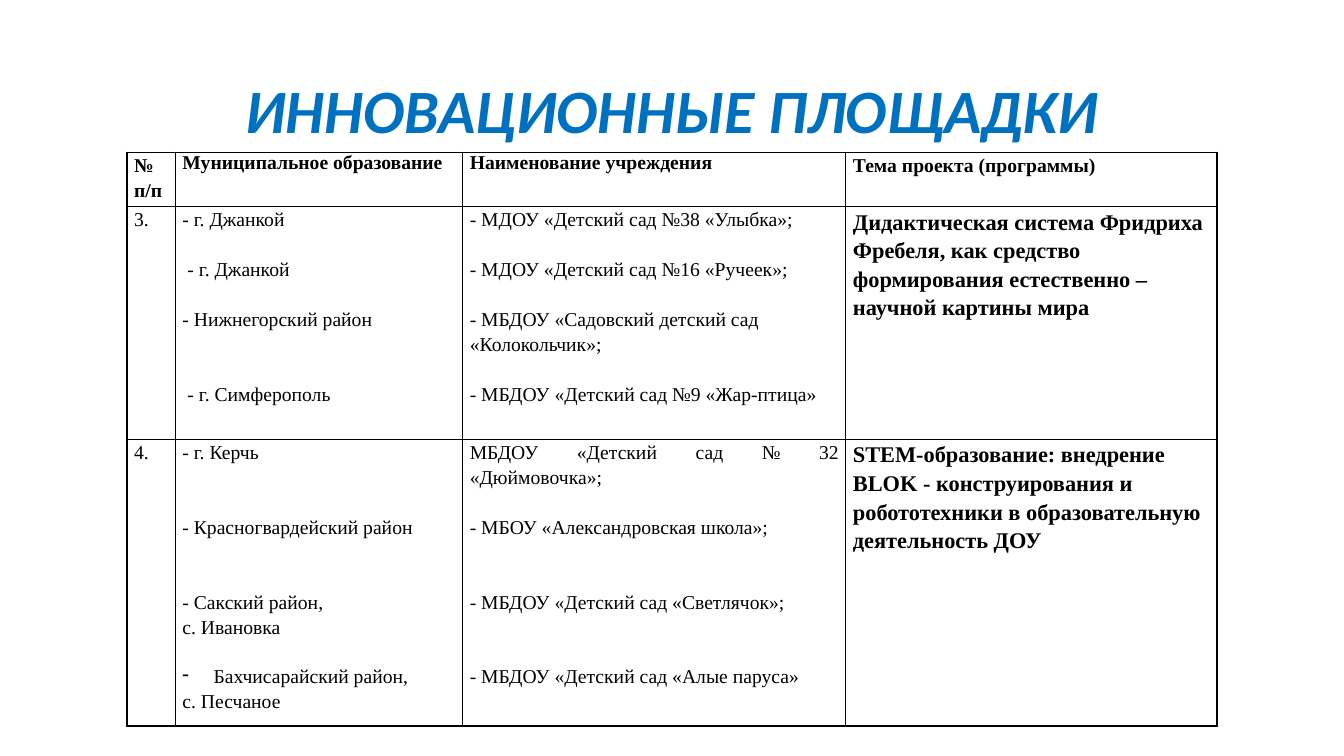
from lxml.etree import SubElement
from pptx import Presentation
from pptx.dml.color import RGBColor
from pptx.enum.text import MSO_ANCHOR, PP_ALIGN
from pptx.oxml.ns import qn
from pptx.util import Pt

SCALE = 9144  # EMU in one px, 100 px to the inch
LINE = 17.8  # height of one table line, points
LEFT, EVEN = PP_ALIGN.LEFT, PP_ALIGN.JUSTIFY

HEADS = [
    ("№ п/п", 1.15),
    ("Муниципальное образование", 1),
    ("Наименование учреждения", 1),
    ("Тема проекта (программы)", 1.15),
]

# Each line: empty lines above, text, then optional left indent and bullet
ROWS = [
    (
        "3.",
        [
            (0, "- г. Джанкой"),
            (1, "- г. Джанкой", 5),
            (1, "- Нижнегорский район"),
            (2, "- г. Симферополь", 5),
        ],
        [
            (0, "- МДОУ «Детский сад №38 «Улыбка»;"),
            (1, "- МДОУ «Детский сад №16 «Ручеек»;"),
            (1, "- МБДОУ «Садовский детский сад «Колокольчик»;"),
            (1, "- МБДОУ «Детский сад №9 «Жар-птица»"),
        ],
        LEFT,
        "Дидактическая система Фридриха Фребеля, как средство "
        "формирования естественно – научной картины мира",
    ),
    (
        "4.",
        [
            (0, "- г. Керчь"),
            (2, "- Красногвардейский район"),
            (2, "- Сакский район,"),
            (0, "с. Ивановка"),
            (1, "Бахчисарайский район,", 31, "-"),
            (0, "с. Песчаное"),
        ],
        [
            (0, "МБДОУ «Детский сад № 32 «Дюймовочка»;"),
            (1, "- МБОУ «Александровская школа»;"),
            (2, "- МБДОУ «Детский сад «Светлячок»;"),
            (2, "- МБДОУ «Детский сад «Алые паруса»"),
        ],
        EVEN,
        "STEM-образование: внедрение BLOK - конструирования и "
        "робототехники в образовательную деятельность ДОУ",
    ),
]


def px(n):
    return n * SCALE


def tint(code):
    return RGBColor.from_string(code)


class Board:
    """Holds the table style and the current slide."""

    face, ink, size = "Times New Roman", "000000", 14

    def __init__(self, deck):
        self.slide = deck.slides.add_slide(deck.slide_layouts[6])

    def title(self, text, *box):
        frame = self.slide.shapes.add_textbox(*map(px, box)).text_frame
        frame.word_wrap = True
        frame.vertical_anchor = MSO_ANCHOR.MIDDLE
        para = frame.paragraphs[0]
        para.text, para.alignment, para.line_spacing = text, PP_ALIGN.CENTER, 0.9
        font = para.font
        font.name, font.size, font.color.rgb = "Calibri", Pt(44), tint("0070C0")
        font.bold = font.italic = True

    def grid(self, left, top, cols, rows):
        box = map(px, (left, top, sum(cols), sum(rows)))
        table = self.slide.shapes.add_table(len(rows), len(cols), *box).table
        table.first_row = table.horz_banding = False
        for col, wide in zip(table.columns, cols):
            col.width = px(wide)
        for row, high in zip(table.rows, rows):
            row.height = px(high)
        for cell in table.iter_cells():
            cell.margin_left = cell.margin_right = px(7)
            cell.margin_top = cell.margin_bottom = 0
            self.edge(cell)
            cell.fill.background()
        return table

    def edge(self, cell):
        """Draw all four borders of a cell."""
        props = cell._tc.get_or_add_tcPr()
        for side in ("a:lnL", "a:lnR", "a:lnT", "a:lnB"):
            line = SubElement(props, qn(side), w=str(Pt(1)))
            fill = SubElement(line, qn("a:solidFill"))
            SubElement(fill, qn("a:srgbClr"), val=self.ink)

    def fill(self, cell, lines, align=EVEN, bold=False, size=size, pitch=1.15):
        """Put lines of text in a cell."""
        frame = cell.text_frame
        for i, (gap, text, *mark) in enumerate(lines):
            para = frame.add_paragraph() if i else frame.paragraphs[0]
            para.text, para.alignment, para.line_spacing = text, align, pitch
            if gap:
                para.space_before = Pt(gap * LINE)
            if mark:
                self.indent(para, *mark)
            font = para.font
            font.name, font.size, font.bold = self.face, Pt(size), bold
            font.color.rgb = tint(self.ink)

    def indent(self, para, left, bullet=None):
        props = para._p.get_or_add_pPr()
        props.set("marL", str(px(left)))
        if bullet:
            props.set("indent", str(px(-left)))
            SubElement(props, qn("a:buChar"), char=bullet)


def main():
    deck = Presentation()
    deck.slide_width, deck.slide_height = px(1333), px(750)
    board = Board(deck)
    board.title("ИННОВАЦИОННЫЕ ПЛОЩАДКИ", 92, 40, 1150, 145)
    table = board.grid(126, 151, (48, 285, 380, 368), (50, 231, 280))
    for c, (text, pitch) in enumerate(HEADS):
        board.fill(table.cell(0, c), [(0, text)], bold=True, pitch=pitch)
    for r, (num, towns, names, align, theme) in enumerate(ROWS, 1):
        board.fill(table.cell(r, 0), [(0, num)])
        board.fill(table.cell(r, 1), towns)
        board.fill(table.cell(r, 2), names, align)
        board.fill(table.cell(r, 3), [(0, theme)], LEFT, bold=True, size=16)
    deck.save("out.pptx")


if __name__ == "__main__":
    main()
